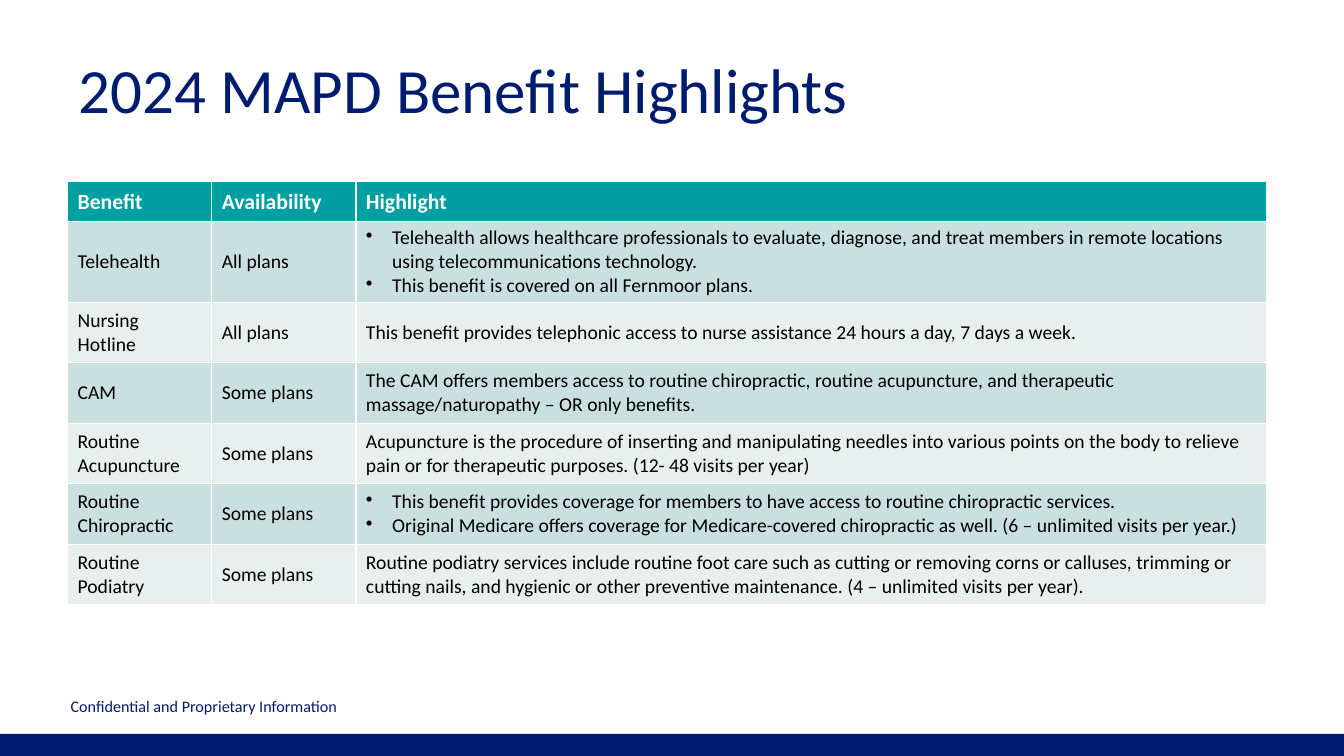
from lxml.etree import SubElement
from pptx import Presentation
from pptx.dml.color import RGBColor
from pptx.enum.shapes import MSO_SHAPE
from pptx.enum.text import MSO_ANCHOR
from pptx.oxml.ns import qn
from pptx.util import Inches, Pt

TITLE = "2024 MAPD Benefit Highlights"
FOOTER = "Confidential and Proprietary Information"
HEADER = ("Benefit", "Availability", "Highlight")
BENEFITS = [
    ("Telehealth", "All plans", [
        "Telehealth allows healthcare professionals to evaluate, diagnose, and treat members "
        "in remote locations using telecommunications technology.",
        "This benefit is covered on all Fernmoor plans."]),
    ("Nursing\nHotline", "All plans",
     "This benefit provides telephonic access to nurse assistance 24 hours a day, 7 days a week."),
    ("CAM", "Some plans",
     "The CAM offers members access to routine chiropractic, routine acupuncture, and therapeutic "
     "massage/naturopathy – OR only benefits."),
    ("Routine\nAcupuncture", "Some plans",
     "Acupuncture is the procedure of inserting and manipulating needles into various points on "
     "the body to relieve pain or for therapeutic purposes. (12- 48 visits per year)"),
    ("Routine\nChiropractic", "Some plans", [
        "This benefit provides coverage for members to have access to routine chiropractic services.",
        "Original Medicare offers coverage for Medicare-covered chiropractic as well. "
        "(6 – unlimited visits per year.)"]),
    ("Routine\nPodiatry", "Some plans",
     "Routine podiatry services include routine foot care such as cutting or removing corns or "
     "calluses, trimming or cutting nails, and hygienic or other preventive maintenance. "
     "(4 – unlimited visits per year)."),
]
COLUMN_WIDTHS = (1.43, 1.43, 9.03)
ROW_HEIGHTS = (0.4, 0.8) + (0.6,) * 5

THEME = {
    "font": "Calibri",
    "navy": "001C70", "teal": "009FA2", "white": "FFFFFF", "black": "000000",
    "bands": ("CADFDF", "E7EFEF"),
    "title": 45, "header": 15.5, "body": 14, "footer": 11.5,
}


def color(name):
    return RGBColor.from_string(THEME.get(name, name))


def apply(target, formats):
    for name, value in formats.items():
        setattr(target, name, value)


def write(para, text, size, ink, bold=False):
    span = para.add_run()
    span.text = text
    apply(span.font, {"name": THEME["font"], "size": Pt(THEME[size]), "bold": bold})
    span.font.color.rgb = color(ink)


def add_label(page, text, size, left, top, width, height):
    box = page.shapes.add_textbox(Inches(left), Inches(top), Inches(width), Inches(height))
    frame = box.text_frame
    apply(frame, {"word_wrap": True, "vertical_anchor": MSO_ANCHOR.MIDDLE,
                  "margin_left": 0, "margin_right": 0, "margin_top": 0, "margin_bottom": 0})
    write(frame.paragraphs[0], text, size, "navy")


def add_bullet(para):
    properties = para._p.get_or_add_pPr()
    properties.set("marL", str(Inches(0.26)))
    properties.set("indent", str(-Inches(0.26)))
    SubElement(properties, qn("a:buChar"), char="•")


def add_borders(cell):
    properties = cell._tc.get_or_add_tcPr()
    for side in ("lnL", "lnR", "lnT", "lnB"):
        line = SubElement(properties, qn(f"a:{side}"), w=str(Pt(1)))
        fill = SubElement(line, qn("a:solidFill"))
        SubElement(fill, qn("a:srgbClr"), val=THEME["white"])


def fill_cell(cell, content, back, size, ink, bold):
    add_borders(cell)
    cell.fill.solid()
    cell.fill.fore_color.rgb = color(back)
    apply(cell, {"vertical_anchor": MSO_ANCHOR.MIDDLE,
                 "margin_left": Inches(0.1), "margin_right": Inches(0.1),
                 "margin_top": Inches(0.03), "margin_bottom": Inches(0.03)})
    bulleted = isinstance(content, list)
    lines = content if bulleted else content.split("\n")
    frame = cell.text_frame
    for index, text in enumerate(lines):
        para = frame.add_paragraph() if index else frame.paragraphs[0]
        if bulleted:
            add_bullet(para)
        write(para, text, size, ink, bold)


def add_benefit_table(page):
    rows = [HEADER] + BENEFITS
    table = page.shapes.add_table(
        len(rows), len(HEADER), Inches(0.67), Inches(1.8),
        Inches(sum(COLUMN_WIDTHS)), Inches(sum(ROW_HEIGHTS))).table
    for column, width in zip(table.columns, COLUMN_WIDTHS):
        column.width = Inches(width)
    for number, (row, height, contents) in enumerate(zip(table.rows, ROW_HEIGHTS, rows)):
        row.height = Inches(height)
        if number:
            style = (THEME["bands"][(number - 1) % 2], "body", "black", False)
        else:
            style = ("teal", "header", "white", True)
        for cell, content in zip(row.cells, contents):
            fill_cell(cell, content, *style)


def main():
    deck = Presentation()
    apply(deck, {"slide_width": Inches(13.33), "slide_height": Inches(7.5)})
    page = deck.slides.add_slide(deck.slide_layouts[6])
    band = page.shapes.add_shape(
        MSO_SHAPE.RECTANGLE, 0, Inches(7.28), deck.slide_width, Inches(0.22))
    band.shadow.inherit = False
    band.fill.solid()
    band.fill.fore_color.rgb = color("navy")
    band.line.fill.background()
    add_label(page, TITLE, "title", 0.78, 0.49, 11.82, 0.78)
    add_label(page, FOOTER, "footer", 0.7, 6.9, 3.65, 0.2)
    add_benefit_table(page)
    deck.save("out.pptx")


if __name__ == "__main__":
    main()
